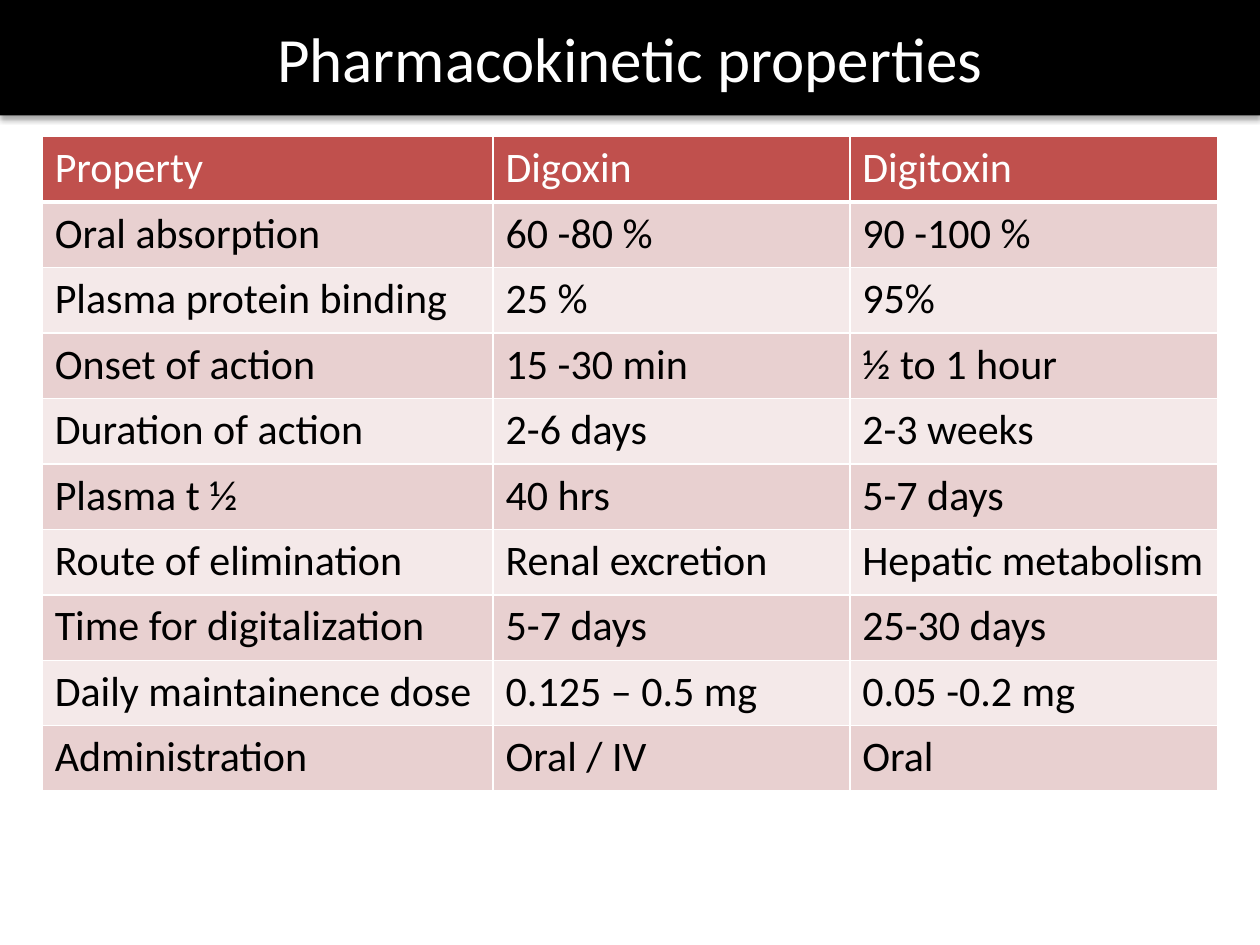
"""Build a slide comparing the pharmacokinetic properties of digoxin and digitoxin."""
import lxml.etree
import pptx
import pptx.dml.color
import pptx.enum.shapes
import pptx.enum.text
import pptx.oxml
import pptx.oxml.ns
import pptx.util

Cm = pptx.util.Cm
RGBColor = pptx.dml.color.RGBColor

BLACK = RGBColor(0x00, 0x00, 0x00)
WHITE = RGBColor(0xFF, 0xFF, 0xFF)
RED = RGBColor(0xC0, 0x50, 0x4D)
ROSE = RGBColor(0xE8, 0xD0, 0xD0)
PALE_ROSE = RGBColor(0xF4, 0xE9, 0xE9)

COLUMN_WIDTHS = [9.09, 7.19, 7.42]
ROW_HEIGHT = 1.32
PROPERTIES = [
    ["Property", "Digoxin", "Digitoxin"],
    ["Oral absorption", "60 -80 %", "90 -100 %"],
    ["Plasma protein binding", "25 %", "95%"],
    ["Onset of action", "15 -30 min", "½ to 1 hour"],
    ["Duration of action", "2-6 days", "2-3 weeks"],
    ["Plasma t ½", "40 hrs", "5-7 days"],
    ["Route of elimination", "Renal excretion", "Hepatic metabolism"],
    ["Time for digitalization", "5-7 days", "25-30 days"],
    ["Daily maintainence dose", "0.125 – 0.5 mg", "0.05 -0.2 mg"],
    ["Administration", "Oral / IV", "Oral"],
]


def write_text(text_frame, text, size=24, color=BLACK, font="Calibri",
               alignment=pptx.enum.text.PP_ALIGN.LEFT):
    paragraph = text_frame.paragraphs[0]
    paragraph.alignment = alignment
    run = paragraph.add_run()
    run.text = text
    run.font.name = font
    run.font.size = pptx.util.Pt(size)
    run.font.bold = False
    run.font.color.rgb = color


class SlideBuilder:
    def __init__(self, slide, border_color=WHITE, border_width=1):
        self.slide = slide
        self.border_color = border_color
        self.border_width = border_width

    def add_banner(self, text, width, height):
        shape = self.slide.shapes.add_shape(
            pptx.enum.shapes.MSO_SHAPE.RECTANGLE, 0, 0, Cm(width), Cm(height))
        shape.fill.solid()
        shape.fill.fore_color.rgb = BLACK
        shape.line.fill.background()
        shape.shadow.inherit = False
        self.add_shadow(shape, blur=3.1, distance=1.8, opacity=35)
        shape.text_frame.word_wrap = True
        shape.text_frame.vertical_anchor = pptx.enum.text.MSO_ANCHOR.MIDDLE
        write_text(shape.text_frame, text, size=36, color=WHITE,
                   alignment=pptx.enum.text.PP_ALIGN.CENTER)

    def add_shadow(self, shape, blur, distance, opacity):
        effects = shape._element.spPr.find(pptx.oxml.ns.qn("a:effectLst"))
        effects.append(pptx.oxml.parse_xml(
            f'<a:outerShdw {pptx.oxml.ns.nsdecls("a")} blurRad="{pptx.util.Pt(blur)}" '
            f'dist="{pptx.util.Pt(distance)}" dir="5400000" rotWithShape="0">'
            f'<a:srgbClr val="{BLACK}"><a:alpha val="{opacity * 1000}"/></a:srgbClr>'
            '</a:outerShdw>'))

    def add_table(self, rows, left, top, column_widths, row_height):
        table = self.slide.shapes.add_table(
            len(rows), len(column_widths), Cm(left), Cm(top),
            Cm(sum(column_widths)), Cm(row_height * len(rows))).table
        for column, width in zip(table.columns, column_widths):
            column.width = Cm(width)
        for row_index, values in enumerate(rows):
            table.rows[row_index].height = Cm(row_height)
            is_header = row_index == 0
            fill = RED if is_header else ROSE if row_index % 2 else PALE_ROSE
            for column_index, text in enumerate(values):
                cell = table.cell(row_index, column_index)
                cell.fill.solid()
                cell.fill.fore_color.rgb = fill
                write_text(cell.text_frame, text, color=WHITE if is_header else BLACK)
                self.add_borders(cell, bottom_width=3 if is_header else self.border_width)

    def add_borders(self, cell, bottom_width):
        properties = cell._tc.get_or_add_tcPr()
        for position, side in enumerate("LRTB"):
            width = bottom_width if side == "B" else self.border_width
            border = lxml.etree.Element(
                pptx.oxml.ns.qn(f"a:ln{side}"), w=str(pptx.util.Pt(width)))
            fill = lxml.etree.SubElement(border, pptx.oxml.ns.qn("a:solidFill"))
            lxml.etree.SubElement(
                fill, pptx.oxml.ns.qn("a:srgbClr"), val=str(self.border_color))
            properties.insert(position, border)


def main():
    presentation = pptx.Presentation()
    presentation.slide_width = Cm(25.4)
    presentation.slide_height = Cm(19.05)
    builder = SlideBuilder(presentation.slides.add_slide(presentation.slide_layouts[6]))
    builder.add_table(PROPERTIES, 0.85, 2.75, COLUMN_WIDTHS, ROW_HEIGHT)
    builder.add_banner("Pharmacokinetic properties", 25.4, 2.33)
    presentation.save("out.pptx")


if __name__ == "__main__":
    main()
